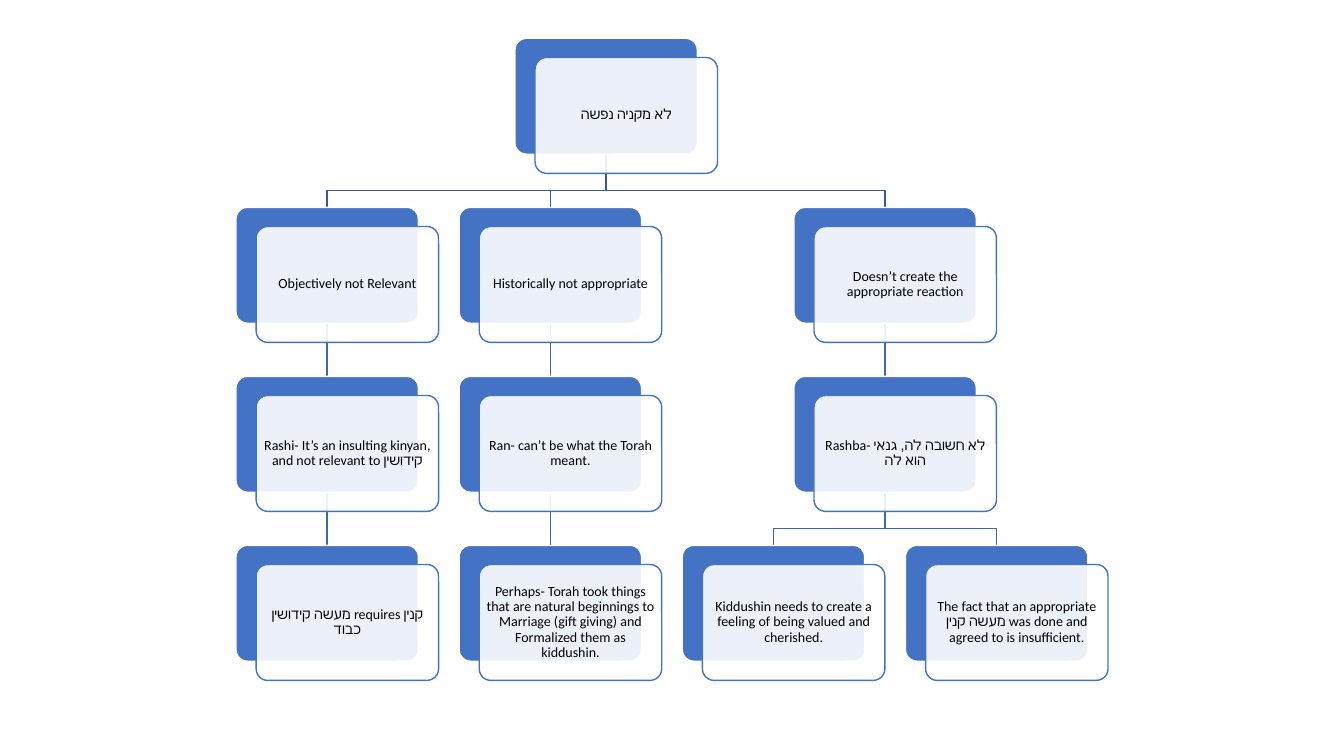
from dataclasses import dataclass, field

from lxml import etree
from pptx import Presentation
from pptx.dml.color import RGBColor
from pptx.enum.shapes import MSO_CONNECTOR, MSO_SHAPE
from pptx.enum.text import MSO_ANCHOR, PP_ALIGN
from pptx.oxml.ns import qn
from pptx.util import Inches, Pt

ROUND = MSO_SHAPE.ROUNDED_RECTANGLE
STRAIGHT = MSO_CONNECTOR.STRAIGHT
MIDDLE, CENTER = MSO_ANCHOR.MIDDLE, PP_ALIGN.CENTER


@dataclass(frozen=True)
class Theme:
    blue: str = "4472C4"
    white: str = "FFFFFF"
    black: str = "000000"
    trunk: str = "365B9D"
    branch: str = "3E67B2"
    font: str = "Calibri"
    size: float = 10
    line: float = 1
    opacity: int = 90


@dataclass
class Node:
    text: str
    kids: list = field(default_factory=list)
    col: float = 0
    row: int = 0


THEME = Theme()
WIDTH, HEIGHT = 13.33, 7.5
COLS, ROWS = 4, 4
CARD_W, CARD_H = 1.81, 1.15
SHIFT_X, SHIFT_Y = 0.2, 0.19
BEND = 0.36
INSET = 0.04

TREE = Node("לא מקניה נפשה", [
    Node("Objectively not Relevant", [
        Node("Rashi- It’s an insulting kinyan, and not relevant to קידושין", [
            Node("מעשה קידושין requires קנין כבוד"),
        ]),
    ]),
    Node("Historically not appropriate", [
        Node("Ran- can’t be what the Torah meant.", [
            Node("Perhaps- Torah took things that are natural beginnings to "
                 "Marriage (gift giving) and Formalized them as kiddushin."),
        ]),
    ]),
    Node("Doesn’t create the appropriate reaction", [
        Node("Rashba- לא חשובה לה, גנאי הוא לה", [
            Node("Kiddushin needs to create a feeling of being valued "
                 "and cherished."),
            Node("The fact that an appropriate מעשה קנין was done and "
                 "agreed to is insufficient."),
        ]),
    ]),
])


def rgb(code):
    return RGBColor.from_string(code)


def arrange(node, row=0, col=0):
    """Put leaves in columns, parents midway over their kids; return next free column."""
    node.row = row
    if not node.kids:
        node.col = col
        return col + 1
    for kid in node.kids:
        col = arrange(kid, row + 1, col)
    node.col = (node.kids[0].col + node.kids[-1].col) / 2
    return col


def walk(node):
    yield node
    for kid in node.kids:
        yield from walk(kid)


def stroke(shape, color):
    shape.line.color.rgb = rgb(color)
    shape.line.width = Pt(THEME.line)


def add_link(slide, start, end, color):
    """Join two points, straight down or with a bend shortly below the start."""
    (x1, y1), (x2, y2) = start, end
    if x1 == x2:
        link = slide.shapes.add_connector(
            STRAIGHT, *(Inches(v) for v in (x1, y1, x2, y2)))
        etree.SubElement(link.element.spPr, qn("a:effectLst"))
    else:
        turn = y1 + BEND
        pen = slide.shapes.build_freeform(Inches(x1), Inches(y1))
        pen.add_line_segments(
            [(Inches(x), Inches(y)) for x, y in ((x1, turn), (x2, turn), end)],
            close=False)
        link = pen.convert_to_shape()
        link.fill.background()
        link.shadow.inherit = False
    stroke(link, color)


def add_panel(slide, left, top, fill, line):
    panel = slide.shapes.add_shape(
        ROUND, *(Inches(v) for v in (left, top, CARD_W, CARD_H)))
    panel.adjustments[0] = 0.1
    panel.shadow.inherit = False
    panel.fill.solid()
    panel.fill.fore_color.rgb = rgb(fill)
    stroke(panel, line)
    return panel


def add_card(slide, left, top, text):
    """A blue panel with a translucent text panel shifted over it."""
    add_panel(slide, left, top, THEME.blue, THEME.white)
    front = add_panel(slide, left + SHIFT_X, top + SHIFT_Y,
                      THEME.white, THEME.blue)
    tint = front.element.spPr.find(qn("a:solidFill")).find(qn("a:srgbClr"))
    etree.SubElement(tint, qn("a:alpha"), val=str(THEME.opacity * 1000))

    frame = front.text_frame
    frame.text = text
    frame.word_wrap = True
    frame.vertical_anchor = MIDDLE
    frame.margin_left = frame.margin_right = Inches(INSET)
    frame.margin_top = frame.margin_bottom = Inches(INSET)
    para = frame.paragraphs[0]
    para.alignment = CENTER
    para.line_spacing = 0.9
    font = para.runs[0].font
    font.name = THEME.font
    font.size = Pt(THEME.size)
    font.color.rgb = rgb(THEME.black)


def add_tree(slide, root, left, top, width, height):
    step_x = (width - CARD_W - SHIFT_X) / (COLS - 1)
    step_y = (height - CARD_H - SHIFT_Y) / (ROWS - 1)

    def place(node):
        return left + node.col * step_x, top + node.row * step_y

    arrange(root)
    for node in walk(root):
        x, y = place(node)
        color = THEME.branch if node.row else THEME.trunk
        for kid in node.kids:
            kid_x, kid_y = place(kid)
            add_link(slide, (x + CARD_W / 2, y + CARD_H),
                     (kid_x + CARD_W / 2, kid_y), color)
    for node in walk(root):
        add_card(slide, *place(node), node.text)


def main():
    deck = Presentation()
    deck.slide_width, deck.slide_height = Inches(WIDTH), Inches(HEIGHT)
    slide = deck.slides.add_slide(deck.slide_layouts[6])
    add_tree(slide, TREE, left=2.34, top=0.38, width=8.65, height=6.37)
    deck.save("out.pptx")


if __name__ == "__main__":
    main()
